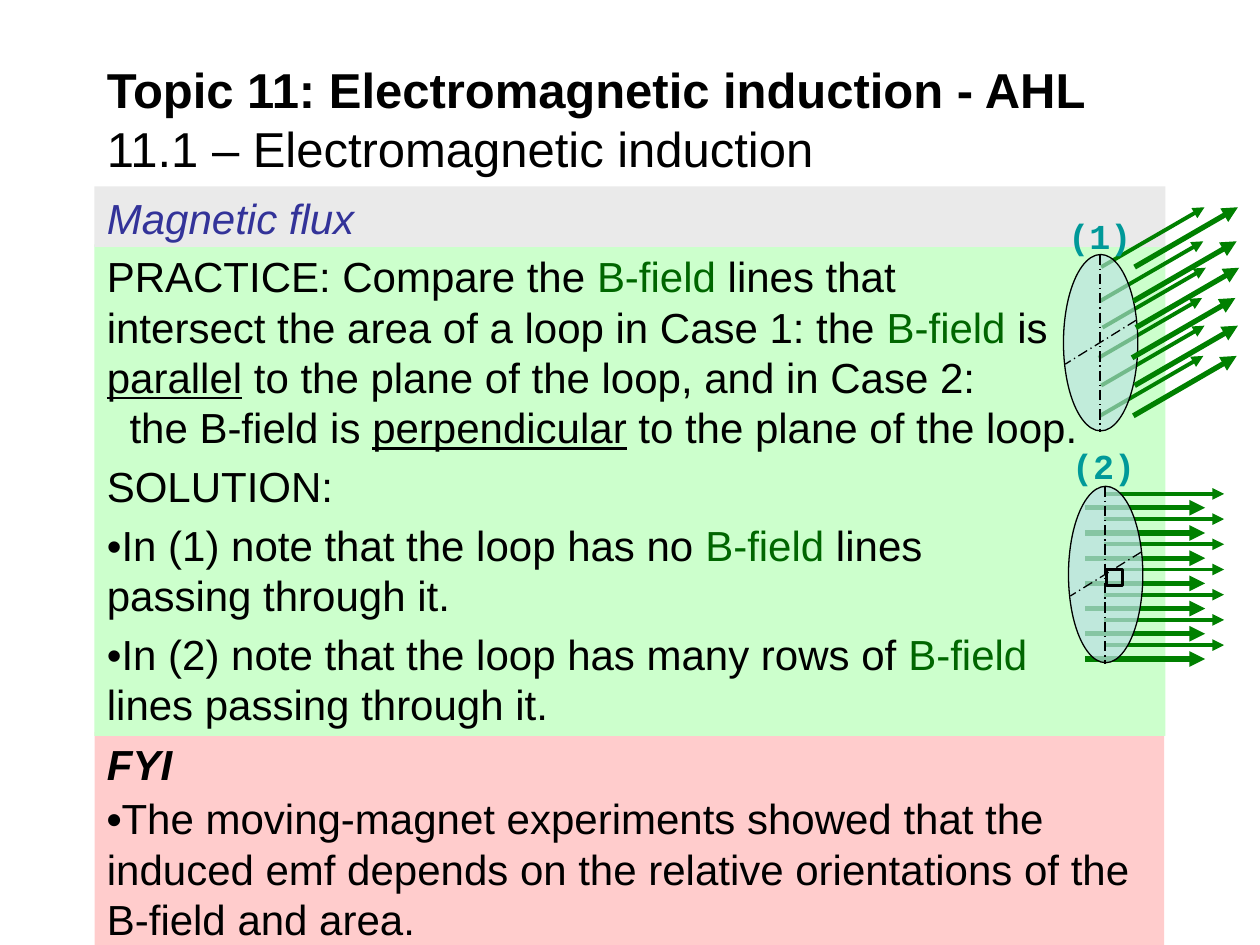
from lxml import etree
from pptx import Presentation
from pptx.dml.color import RGBColor
from pptx.enum.dml import MSO_LINE as Dash
from pptx.enum.shapes import MSO_CONNECTOR as Link, MSO_SHAPE as Shape
from pptx.enum.text import MSO_ANCHOR as Anchor, PP_ALIGN as Align
from pptx.oxml.ns import qn
from pptx.util import Inches, Pt

BLACK, GREEN, FIELD = "000000", "008000", "006600"
RAYS = [(87.4, 21.2), (87.3, 23.9), (87.5, 26), (87.2, 28.4), (87.4, 30.6), (87.3, 33)]


def cell(*nums):
    """Turn columns and rows of a 100 by 75 grid into lengths."""
    return [Inches(num / 10) for num in nums]


def paint(part, color):
    """Set a hex colour on a fill or font colour."""
    part.rgb = RGBColor.from_string(color)


def write(para, text, size=24, font="Arial", color=BLACK, bold=False, italic=False, under=False):
    """Add formatted text to a paragraph, with a line break at each newline."""
    for num, line in enumerate(text.split("\n")):
        if num:
            para.add_line_break()
        if line:
            run = para.add_run()
            run.text = line
            face = run.font
            face.size, face.name, face.bold = Pt(size), font, bold
            face.italic, face.underline = italic, under
            paint(face.color, color)


def fill_text(frame, paras, anchor=Anchor.TOP):
    """Write paragraphs, each a space before, an indent and a list of runs."""
    frame.word_wrap, frame.vertical_anchor = True, anchor
    for num, (space, left, runs) in enumerate(paras):
        para = frame.add_paragraph() if num else frame.paragraphs[0]
        para.alignment, para.space_before = Align.LEFT, Pt(space)
        if left:
            props = para._p.get_or_add_pPr()
            props.set("marL", str(Inches(left)))
            props.set("indent", "0")
        for text, style in runs:
            write(para, text, **style)


def form(slide, kind, box, fill=None, alpha=None, line=None):
    """Add a preset shape with an optional fill, opacity and outline."""
    item = slide.shapes.add_shape(kind, *cell(*box))
    item.shadow.inherit = False
    if fill:
        item.fill.solid()
        paint(item.fill.fore_color, fill)
    else:
        item.fill.background()
    if alpha:
        tint = item.fill._xPr.find(qn("a:solidFill"))[0]
        etree.SubElement(tint, qn("a:alpha"), val=str(alpha * 1000))
    if line:
        paint(item.line.color, BLACK)
        item.line.width = Pt(line)
    else:
        item.line.fill.background()
    return item


def panel(slide, box, fill, paras):
    """Add a filled panel of text."""
    fill_text(form(slide, Shape.RECTANGLE, box, fill).text_frame, paras)


def label(slide, box, paras, anchor=Anchor.TOP):
    """Add a text box."""
    fill_text(slide.shapes.add_textbox(*cell(*box)).text_frame, paras, anchor)


def stroke(slide, ends, color, width, dash=None, head=False):
    """Add a straight line, dashed or with an arrowhead."""
    item = slide.shapes.add_connector(Link.STRAIGHT, *cell(*ends))
    paint(item.line.color, color)
    item.line.width = Pt(width)
    if dash:
        item.line.dash_style = dash
    if head:
        etree.SubElement(item.line._get_or_add_ln(), qn("a:tailEnd"), type="triangle")
    etree.SubElement(item._element.spPr, qn("a:effectLst"))


def slant(slide, shift, width):
    """Draw the slanted field lines of the first case."""
    for x, y in RAYS:
        x += shift
        stroke(slide, (x, y, x + 8.2, y - 4.75), GREEN, width, head=True)


def level(slide, x, top, width):
    """Draw the seven level field lines of the second case."""
    for row in range(7):
        y = top + 2 * row
        stroke(slide, (x, y, x + 9.5, y), GREEN, width, head=True)


def loop(slide, x, y, alpha):
    """Draw the loop with its two dashed axes."""
    form(slide, Shape.OVAL, (x, y, 5.9, 14), "BBE0E3", alpha, 0.75)
    for ends in ((x + 2.9, y, x + 2.9, y + 14.1), (x + 5.8, y + 5.2, x + 0.15, y + 8.7)):
        stroke(slide, ends, BLACK, 0.75, dash=Dash.LONG_DASH_DOT)


def tag(slide, x, y, text):
    """Number a case."""
    style = dict(size=20, font="Courier New", color="009999", bold=True)
    label(slide, (x, y, 8.2, 4.3), [(0, 0, [(text, style)])])


def panels(slide):
    """Add the three panels of text."""
    field, under = ("B-field", dict(color=FIELD)), dict(under=True)
    panel(slide, (7.5, 58.1, 84.9, 16.9), "FFCCCC", [
        (2.4, 0, [("FYI", dict(bold=True, italic=True))]),
        (2.4, 0, [("•", dict(bold=True)),
                  ("The moving-magnet experiments showed that the induced emf depends on "
                   "the relative orientations of the B-field and area.", {})])])
    panel(slide, (7.5, 19.4, 85, 39), "CCFFCC", [
        (4.8, 0, [("PRACTICE: Compare the ", {}), field,
                  (" lines that\nintersect the area of a loop in Case 1: the ", {}), field,
                  (" is ", {}), ("parallel", under),
                  (" to the plane of the loop, and in Case 2:", {})]),
        (0, 0.18, [("the B-field is ", {}), ("perpendicular", under),
                   (" to the plane of the loop.", {})]),
        (4.8, 0, [("SOLUTION:", {})]),
        (4.8, 0, [("•In (1) note that the loop has no ", {}), field,
                  (" lines\npassing through it.", {})]),
        (4.8, 0, [("•In (2) note that the loop has many rows of ", {}), field,
                  ("\nlines passing through it.", {})])])
    panel(slide, (7.5, 14.8, 85, 4.8), "EAEAEA",
          [(4.8, 0, [("Magnetic flux", dict(color="333399", italic=True))])])


def main():
    """Build and save the slide."""
    deck = Presentation()
    deck.slide_width, deck.slide_height = cell(100, 75)
    slide = deck.slides.add_slide(deck.slide_layouts[6])
    panels(slide)
    slant(slide, 0, 2.25)
    loop(slide, 84.4, 20.2, 61)
    level(slide, 87.65, 39.2, 2.25)
    tag(slide, 83.8, 16.5, "(1)")
    tag(slide, 84.1, 34.8, "(2)")
    slant(slide, 2.65, 3)
    level(slide, 86.15, 40.3, 3)
    loop(slide, 84.8, 38.6, 72)
    form(slide, Shape.RECTANGLE, (87.8, 45.2, 1.3, 1.3), line=1.5)
    label(slide, (7.5, 4.5, 85, 9.8), [
        (0, 0, [("Topic 11: Electromagnetic induction - AHL\n", dict(size=28, bold=True)),
                ("11.1 – Electromagnetic induction", dict(size=28))])], Anchor.MIDDLE)
    deck.save("out.pptx")


if __name__ == "__main__":
    main()
